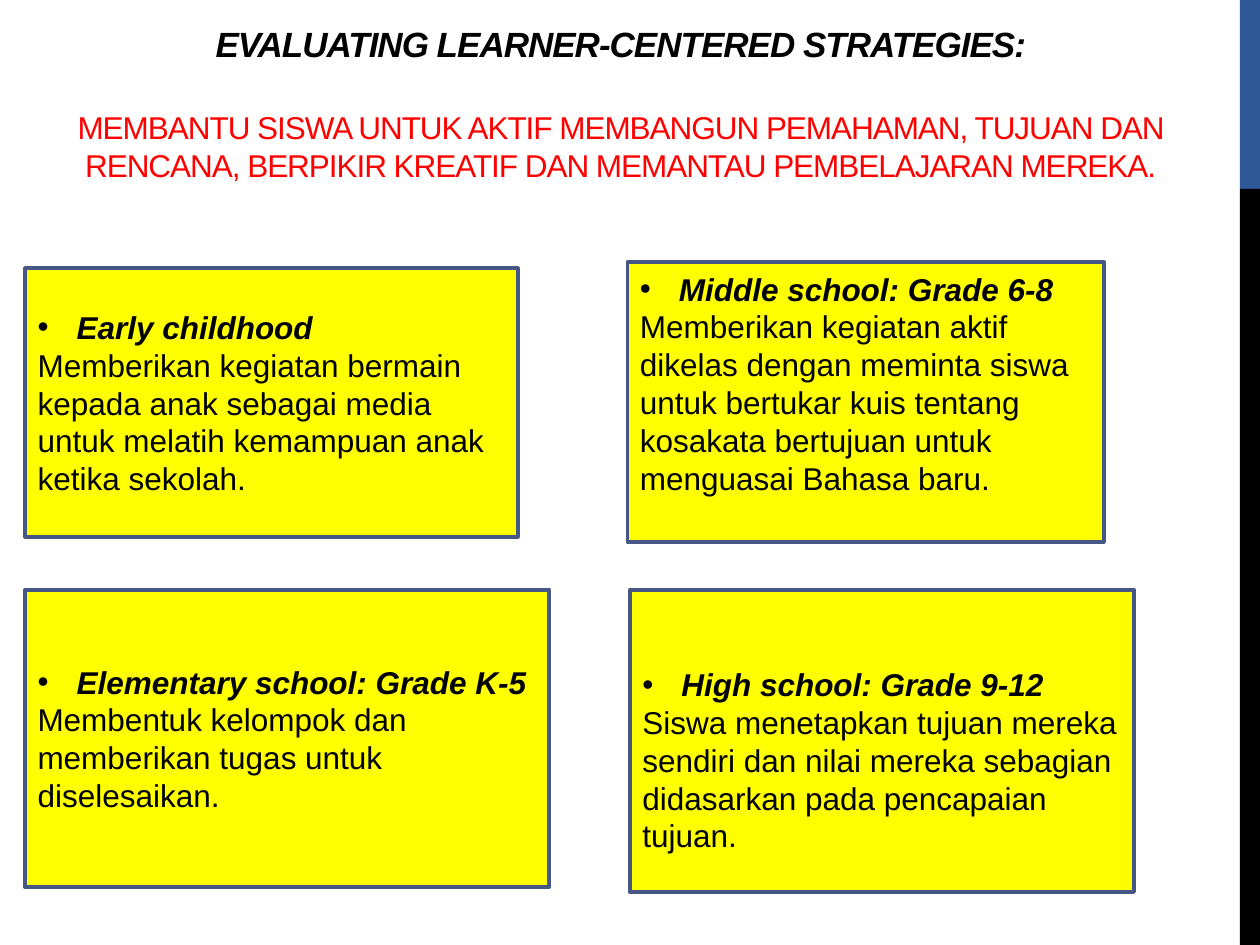
from lxml import etree
from pptx import Presentation
from pptx.dml.color import RGBColor
from pptx.enum.shapes import MSO_SHAPE
from pptx.enum.text import MSO_ANCHOR, PP_ALIGN
from pptx.oxml.ns import qn
from pptx.util import Inches, Pt

RECTANGLE = MSO_SHAPE.RECTANGLE
TOP, MIDDLE = MSO_ANCHOR.TOP, MSO_ANCHOR.MIDDLE
LEFT, CENTER = PP_ALIGN.LEFT, PP_ALIGN.CENTER
TITLE_ONLY = 5
FONT = "Arial"
COLORS = {"blue": "2F5897", "black": "000000", "red": "FF0000",
          "yellow": "FFFF00", "border": "475785"}

TITLE = "EVALUATING LEARNER-CENTERED STRATEGIES:"
SUBTITLE = ("MEMBANTU SISWA UNTUK AKTIF MEMBANGUN PEMAHAMAN, TUJUAN DAN RENCANA, "
            "BERPIKIR KREATIF DAN MEMANTAU PEMBELAJARAN MEREKA.")
MARGIN = 0.05
BLANK_LINE = 0.35
CARDS = [
    ((0.2, 2.13, 3.91, 2.13), MARGIN, MARGIN, "Early childhood",
     "Memberikan kegiatan bermain kepada anak sebagai media untuk melatih "
     "kemampuan anak ketika sekolah."),
    ((0.2, 4.68, 4.16, 2.36), MARGIN, MARGIN, "Elementary school: Grade K-5",
     "Membentuk kelompok dan memberikan tugas untuk diselesaikan."),
    ((4.98, 2.08, 3.78, 2.22), MARGIN, BLANK_LINE, "Middle school: Grade 6-8",
     "Memberikan kegiatan aktif dikelas dengan meminta siswa untuk bertukar kuis "
     "tentang kosakata bertujuan untuk menguasai Bahasa baru."),
    ((5, 4.68, 4, 2.4), BLANK_LINE, MARGIN, "High school: Grade 9-12",
     "Siswa menetapkan tujuan mereka sendiri dan nilai mereka sebagian "
     "didasarkan pada pencapaian tujuan."),
]


def color(name):
    return RGBColor.from_string(COLORS[name])


def format_runs(para, size, color_name, emphasis=False):
    for span in para.runs:
        span.font.name = FONT
        span.font.size = Pt(size)
        span.font.bold = span.font.italic = emphasis
        span.font.color.rgb = color(color_name)


def add_rectangle(page, box, fill):
    shape = page.shapes.add_shape(RECTANGLE, *map(Inches, box))
    shape.shadow.inherit = False
    shape.fill.solid()
    shape.fill.fore_color.rgb = color(fill)
    shape.line.fill.background()
    return shape


def add_side_bar(page, box, split):
    left, top, width, height = box
    add_rectangle(page, (left, top, width, split), "blue")
    add_rectangle(page, (left, top + split, width, height - split), "black")


def fill_title(page, box):
    title = page.shapes.title
    title.left, title.top, title.width, title.height = map(Inches, box)
    frame = title.text_frame
    frame.word_wrap = True
    frame.vertical_anchor = TOP
    frame.text = f"{TITLE}\n{SUBTITLE}"
    heading, subtitle = frame.paragraphs
    format_runs(heading, 20, "black", emphasis=True)
    format_runs(subtitle, 18, "red")
    for para, gap in ((heading, 0), (subtitle, 25)):
        para.alignment = CENTER
        para.space_before = Pt(gap)
        for span in para.runs:
            span.font._element.set("spc", "-60")


def add_bullet(para, indent):
    properties = para._p.get_or_add_pPr()
    properties.set("marL", str(Inches(indent)))
    properties.set("indent", str(-Inches(indent)))
    etree.SubElement(properties, qn("a:buFont")).set("typeface", FONT)
    etree.SubElement(properties, qn("a:buChar")).set("char", "•")


def add_card(page, box, margin_top, margin_bottom, heading_text, body_text):
    card = add_rectangle(page, box, "yellow")
    card.line.color.rgb = color("border")
    card.line.width = Pt(2.25)
    frame = card.text_frame
    frame.word_wrap = True
    frame.vertical_anchor = MIDDLE
    frame.margin_top = Inches(margin_top)
    frame.margin_bottom = Inches(margin_bottom)
    frame.text = f"{heading_text}\n{body_text}"
    heading, body = frame.paragraphs
    add_bullet(heading, 0.31)
    format_runs(heading, 18, "black", emphasis=True)
    format_runs(body, 18, "black")
    for para in (heading, body):
        para.alignment = LEFT


def main():
    deck = Presentation()
    deck.slide_width, deck.slide_height = Inches(10), Inches(7.5)
    page = deck.slides.add_slide(deck.slide_layouts[TITLE_ONLY])
    add_side_bar(page, (9.84, 0, 0.16, 7.5), 1.5)
    fill_title(page, (0.2, 0.13, 9.45, 1.65))
    for card in CARDS:
        add_card(page, *card)
    deck.save("out.pptx")


if __name__ == "__main__":
    main()
